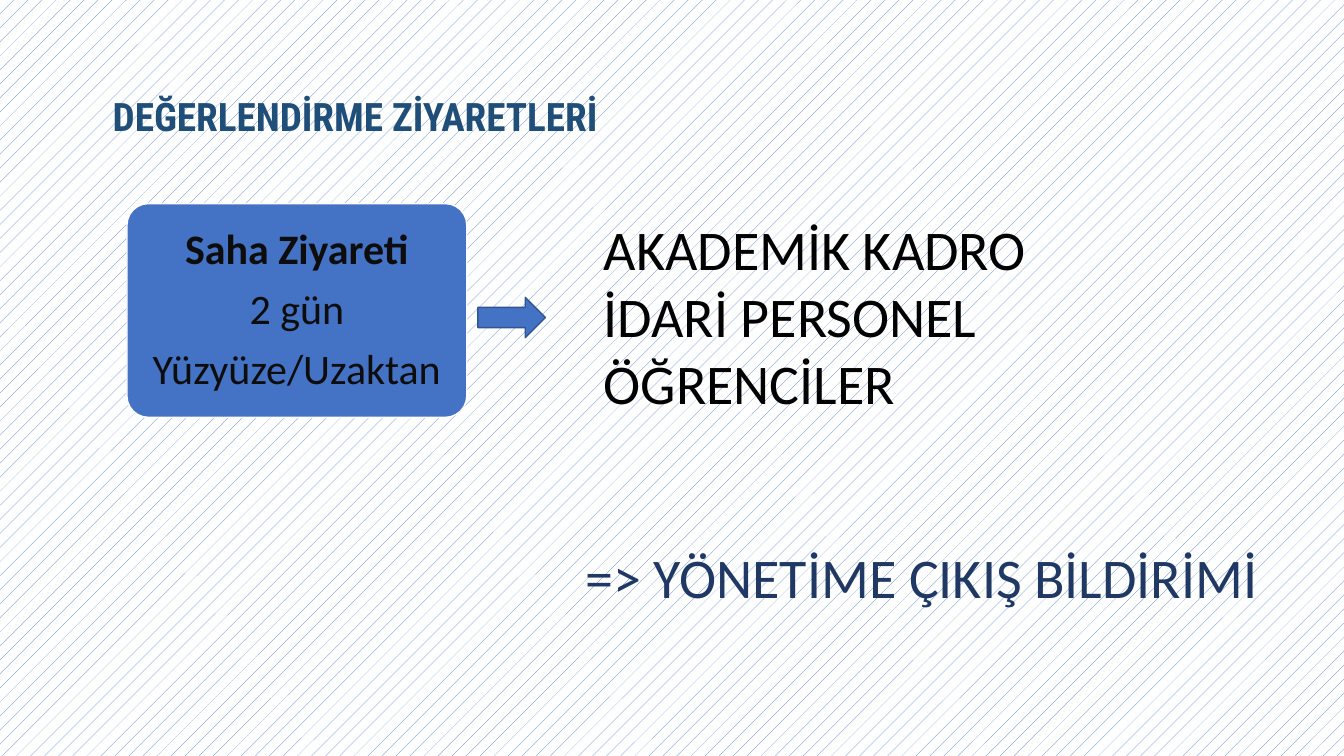
from pptx import Presentation
from pptx.dml.color import RGBColor
from pptx.enum.dml import MSO_PATTERN
from pptx.enum.shapes import MSO_SHAPE
from pptx.enum.text import MSO_ANCHOR, MSO_AUTO_SIZE, PP_ALIGN
from pptx.util import Inches, Pt

DOTS = MSO_PATTERN.PERCENT_5
ROUNDED = MSO_SHAPE.ROUNDED_RECTANGLE
ARROW = MSO_SHAPE.RIGHT_ARROW
MIDDLE = MSO_ANCHOR.MIDDLE
GROW = MSO_AUTO_SIZE.SHAPE_TO_FIT_TEXT
CENTER = PP_ALIGN.CENTER
BLUE, WHITE = "4472C4", "FFFFFF"


def color(code):
    return RGBColor.from_string(code)


def apply_format(target, values):
    for name, value in values.items():
        setattr(target, name, value)


class VisitSlide:
    """Draws the elements of the slide in one shared style."""

    def __init__(self, slide, font="Calibri"):
        self.slide = slide
        self.font = font

    def background(self, fore, back):
        fill = self.slide.background.fill
        fill.patterned()
        fill.pattern = DOTS
        fill.fore_color.rgb = color(fore)
        fill.back_color.rgb = color(back)

    def set_lines(self, frame, lines, size, ink, font=None, bold_lines=0, **layout):
        frame.text = "\n".join(lines)
        for index, paragraph in enumerate(frame.paragraphs):
            apply_format(paragraph, layout)
            for run in paragraph.runs:
                apply_format(run.font, {
                    "name": font or self.font,
                    "size": Pt(size),
                    "bold": index < bold_lines,
                })
                run.font.color.rgb = color(ink)

    def text(self, place, lines, size, ink, **style):
        box = self.slide.shapes.add_textbox(*map(Inches, place))
        apply_format(box.text_frame, {"word_wrap": True, "auto_size": GROW})
        self.set_lines(box.text_frame, lines, size, ink, **style)

    def shape(self, kind, place, outline):
        shape = self.slide.shapes.add_shape(kind, *map(Inches, place))
        shape.shadow.inherit = False
        shape.fill.solid()
        shape.fill.fore_color.rgb = color(BLUE)
        shape.line.color.rgb = color(outline)
        shape.line.width = Pt(1)
        return shape

    def card(self, place, lines, size, ink, **style):
        card = self.shape(ROUNDED, place, WHITE)
        card.adjustments[0] = 0.1
        sides = ("left", "top", "right", "bottom")
        apply_format(card.text_frame, {f"margin_{side}": Inches(0.12) for side in sides})
        apply_format(card.text_frame, {"word_wrap": True, "vertical_anchor": MIDDLE})
        self.set_lines(card.text_frame, lines, size, ink, alignment=CENTER,
                       line_spacing=0.9, space_after=Pt(size * 0.35), **style)


def main():
    deck = Presentation()
    deck.slide_width, deck.slide_height = Inches(13.33), Inches(7.5)
    visit = VisitSlide(deck.slides.add_slide(deck.slide_layouts[6]))
    visit.background(BLUE, WHITE)
    visit.text((1.02, 0.87, 7.44, 1.04), ["DEĞERLENDİRME ZİYARETLERİ"], 28, "1F4E79",
               font="Roboto Condensed", bold_lines=1)
    visit.card((1.26, 2.02, 3.37, 2.12), ["Saha Ziyareti", "2 gün", "Yüzyüze/Uzaktan"],
               30, "0D0D0D", bold_lines=1)
    visit.text((5.89, 2.08, 6.98, 2.12), ["AKADEMİK KADRO", "İDARİ PERSONEL", "ÖĞRENCİLER"],
               40, "000000")
    visit.shape(ARROW, (4.74, 2.95, 0.67, 0.4), "325491")
    visit.text((5.71, 5.33, 6.98, 0.77), ["=> YÖNETİME ÇIKIŞ BİLDİRİMİ"], 40, "203864")
    deck.save("out.pptx")


if __name__ == "__main__":
    main()
